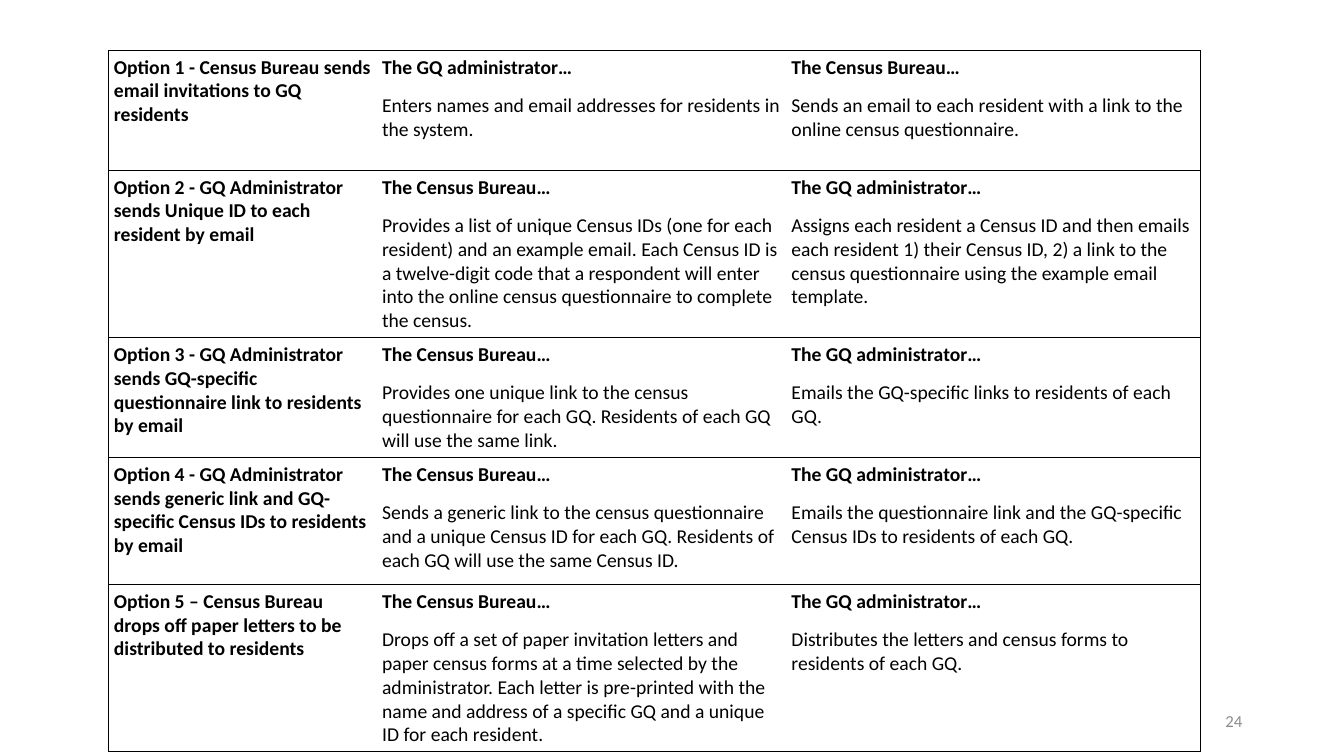
from pptx import Presentation
from pptx.dml.color import RGBColor
from pptx.enum import text
from pptx.oxml.ns import qn
from pptx.util import Inches, Pt
from lxml import etree

COLORS = {"ink": "000000", "page_number": "8C8C8C"}
FONT = "Calibri"
BUREAU = "The Census Bureau…"
ADMIN = "The GQ administrator…"
COLUMN_WIDTHS = (2.66, 4.06, 4.11)
HEADING_HEIGHT = 0.38

# option, first actor, first task, second actor, second task, task row height
OPTIONS = [
    ("Option 1 - Census Bureau sends email invitations to GQ residents",
     ADMIN, "Enters names and email addresses for residents in the system.",
     BUREAU, "Sends an email to each resident with a link to the online census "
     "questionnaire.", 0.81),
    ("Option 2 - GQ Administrator sends Unique ID to each resident by email",
     BUREAU, "Provides a list of unique Census IDs (one for each resident) and an "
     "example email. Each Census ID is a twelve-digit code that a respondent will "
     "enter into the online census questionnaire to complete the census.",
     ADMIN, "Assigns each resident a Census ID and then emails each resident 1) their "
     "Census ID, 2) a link to the census questionnaire using the example email "
     "template.", 1.28),
    ("Option 3 - GQ Administrator sends GQ-specific questionnaire link to residents "
     "by email",
     BUREAU, "Provides one unique link to the census questionnaire for each GQ. "
     "Residents of each GQ will use the same link.",
     ADMIN, "Emails the GQ-specific links to residents of each GQ.", 0.81),
    ("Option 4 - GQ Administrator sends generic link and GQ-specific Census IDs to "
     "residents by email",
     BUREAU, "Sends a generic link to the census questionnaire and a unique Census ID "
     "for each GQ. Residents of each GQ will use the same Census ID.",
     ADMIN, "Emails the questionnaire link and the GQ-specific Census IDs to residents "
     "of each GQ.", 0.88),
    ("Option 5 – Census Bureau drops off paper letters to be distributed to residents",
     BUREAU, "Drops off a set of paper invitation letters and paper census forms at a "
     "time selected by the administrator. Each letter is pre-printed with the name and "
     "address of a specific GQ and a unique ID for each resident.",
     ADMIN, "Distributes the letters and census forms to residents of each GQ.", 1.28),
]


def add_run(paragraph, wording, size, color, bold=False):
    run = paragraph.add_run()
    run.text = wording
    run.font.name = FONT
    run.font.size = Pt(size)
    run.font.bold = bold
    run.font.color.rgb = RGBColor.from_string(COLORS[color])


def set_borders(cell, drawn):
    """Draw the sides named in drawn (letters of LRTB) and hide the others."""
    properties = cell._tc.get_or_add_tcPr()
    for side in "LRTB":
        line = etree.SubElement(properties, qn(f"a:ln{side}"), w=str(Pt(1)))
        if side in drawn:
            fill = etree.SubElement(line, qn("a:solidFill"))
            etree.SubElement(fill, qn("a:srgbClr"), val=COLORS["ink"])
        else:
            etree.SubElement(line, qn("a:noFill"))


def style_cell(cell, borders):
    cell.margin_left = cell.margin_right = Inches(0.05)
    cell.margin_top = cell.margin_bottom = Inches(0.05)
    cell.vertical_anchor = text.MSO_ANCHOR.TOP
    set_borders(cell, borders)
    cell.fill.background()


def write_cell(cell, wording, bold):
    add_run(cell.text_frame.paragraphs[0], wording, 14, "ink", bold)


def add_options_table(slide):
    heights = [h for option in OPTIONS for h in (HEADING_HEIGHT, option[-1])]
    table = slide.shapes.add_table(
        len(heights), len(COLUMN_WIDTHS), Inches(1.08), Inches(0.5),
        Inches(sum(COLUMN_WIDTHS)), Inches(sum(heights))).table
    table.first_row = table.horz_banding = False
    for column, width in zip(table.columns, COLUMN_WIDTHS):
        column.width = Inches(width)
    for row_index, height in enumerate(heights):
        table.rows[row_index].height = Inches(height)
        for column_index, sides in enumerate(("L", "", "R")):
            style_cell(table.cell(row_index, column_index), sides + "TB"[row_index % 2])

    for index, (option, actor1, task1, actor2, task2, _) in enumerate(OPTIONS):
        heading, body = 2 * index, 2 * index + 1
        option_cell = table.cell(heading, 0)
        option_cell.merge(table.cell(body, 0))
        set_merged_bottom(option_cell)
        write_cell(option_cell, option, True)
        for column, actor, task in ((1, actor1, task1), (2, actor2, task2)):
            write_cell(table.cell(heading, column), actor, True)
            write_cell(table.cell(body, column), task, False)


def set_merged_bottom(cell):
    """Close the lower edge of a cell that spans two rows."""
    bottom = cell._tc.tcPr.find(qn("a:lnB"))
    bottom.remove(bottom[0])
    fill = etree.SubElement(bottom, qn("a:solidFill"))
    etree.SubElement(fill, qn("a:srgbClr"), val=COLORS["ink"])


def add_page_number(slide, number):
    frame = slide.shapes.add_textbox(
        Inches(9.42), Inches(6.95), Inches(3), Inches(0.4)).text_frame
    frame.word_wrap = True
    frame.vertical_anchor = text.MSO_ANCHOR.MIDDLE
    frame.paragraphs[0].alignment = text.PP_ALIGN.RIGHT
    add_run(frame.paragraphs[0], number, 12, "page_number")


def main():
    deck = Presentation()
    deck.slide_width, deck.slide_height = Inches(13.33), Inches(7.5)
    slide = deck.slides.add_slide(deck.slide_layouts[6])
    add_page_number(slide, "24")
    add_options_table(slide)
    deck.save("out.pptx")


if __name__ == "__main__":
    main()
